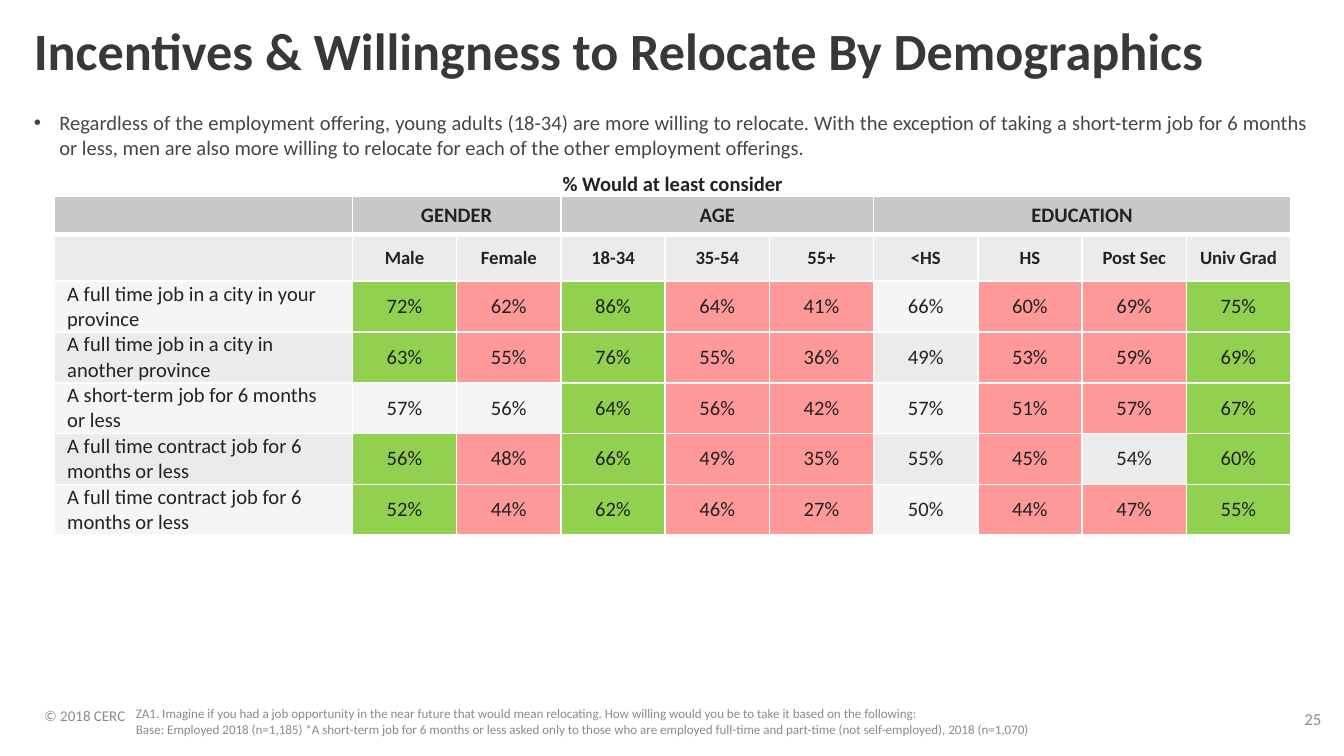
"""Build the slide on willingness to relocate by demographic group."""
from typing import NamedTuple

from lxml import etree
from pptx import Presentation
from pptx.dml.color import RGBColor
from pptx.enum.text import MSO_ANCHOR, MSO_AUTO_SIZE, PP_ALIGN
from pptx.oxml.ns import qn
from pptx.util import Cm, Pt

TOP, MID, LOW = MSO_ANCHOR.TOP, MSO_ANCHOR.MIDDLE, MSO_ANCHOR.BOTTOM
LEFT, CENTER, JUST = PP_ALIGN.LEFT, PP_ALIGN.CENTER, PP_ALIGN.JUSTIFY
FIXED = MSO_AUTO_SIZE.NONE

HUES = {
    "title": "383839", "body": "444647", "note": "888B8D", "text": "222223",
    "head": "C8C9C7", "dark": "EBEBEB", "light": "F5F5F5",
    "high": "92D050", "low": "FF9999", "line": "FFFFFF",
}
MARKS = {"+": "high", "-": "low"}


class Box(NamedTuple):
    left: float
    top: float
    width: float
    height: float


class Label(NamedTuple):
    box: Box
    text: str
    size: float
    hue: str
    bold: bool = False
    align: PP_ALIGN = LEFT
    anchor: MSO_ANCHOR = LOW
    wrap: bool = True
    space: float = 1.0


class Row(NamedTuple):
    offer: str
    rates: tuple[int, ...]
    marks: str


class Group(NamedTuple):
    name: str
    levels: tuple[str, ...]


GROUPS = (
    Group("GENDER", ("Male", "Female")),
    Group("AGE", ("18-34", "35-54", "55+")),
    Group("EDUCATION", ("<HS", "HS", "Post Sec", "Univ Grad")),
)
ROWS = (
    Row("A full time job in a city in your province",
        (72, 62, 86, 64, 41, 66, 60, 69, 75), "+-+--.--+"),
    Row("A full time job in a city in another province",
        (63, 55, 76, 55, 36, 49, 53, 59, 69), "+-+--.--+"),
    Row("A short-term job for 6 months or less",
        (57, 56, 64, 56, 42, 57, 51, 57, 67), "..+--.--+"),
    Row("A full time contract job for 6 months or less",
        (56, 48, 66, 49, 35, 55, 45, 54, 60), "+-+--.-.+"),
    Row("A full time contract job for 6 months or less",
        (52, 44, 62, 46, 27, 50, 44, 47, 55), "+-+--.--+"),
)
LABELS = (
    Label(Box(0.84, 13.23, 1.93, 0.46), "© 2018 CERC", 8, "note",
          wrap=False, space=0.85),
    Label(Box(24.46, 13.44, 0.71, 0.33), "25", 9, "note", align=CENTER,
          wrap=False, space=0.85),
    Label(Box(2.57, 13.31, 20.73, 0.61),
          "ZA1. Imagine if you had a job opportunity in the near future that "
          "would mean relocating. How willing would you be to take it based "
          "on the following:\n"
          "Base: Employed 2018 (n=1,185) *A short-term job for 6 months or "
          "less asked only to those who are employed full-time and part-time "
          "(not self-employed), 2018 (n=1,070)", 7, "note"),
    Label(Box(9.07, 3.23, 7.29, 0.48), "% Would at least consider", 11,
          "text", bold=True, align=CENTER, anchor=TOP),
)


def write(frame, text: str, *, size: float, hue: str, bold: bool = False,
          align: PP_ALIGN = LEFT, space: float = 1.0) -> None:
    for num, line in enumerate(text.split("\n")):
        para = frame.add_paragraph() if num else frame.paragraphs[0]
        para.alignment, para.line_spacing = align, space
        para.space_before = Pt(0)
        run = para.add_run()
        run.text = line
        run.font.name, run.font.size, run.font.bold = "Calibri", Pt(size), bold
        run.font.color.rgb = RGBColor.from_string(HUES[hue])


def place(shape, box: Box, anchor: MSO_ANCHOR, wrap: bool = True):
    shape.left, shape.top, shape.width, shape.height = map(Cm, box)
    frame = shape.text_frame
    frame.margin_left = frame.margin_right = 0
    frame.margin_top = frame.margin_bottom = 0
    frame.auto_size, frame.word_wrap = FIXED, wrap
    frame.vertical_anchor = anchor
    return frame


def add_label(slide, label: Label) -> None:
    shape = slide.shapes.add_textbox(*map(Cm, label.box))
    frame = place(shape, label.box, label.anchor, label.wrap)
    write(frame, label.text, size=label.size, hue=label.hue, bold=label.bold,
          align=label.align, space=label.space)


def edge(cell, thick: str = "") -> None:
    props = cell._tc.get_or_add_tcPr()
    for side in "LRTB":
        width = Pt(3 if side == thick else 1)
        line = etree.SubElement(props, qn(f"a:ln{side}"), w=str(width))
        fill = etree.SubElement(line, qn("a:solidFill"))
        etree.SubElement(fill, qn("a:srgbClr"), val=HUES["line"])


def fill_cell(cell, text: str, fill: str, *, pad: float = 0.03,
              thick: str = "", **look) -> None:
    edge(cell, thick)
    cell.fill.solid()
    cell.fill.fore_color.rgb = RGBColor.from_string(HUES[fill])
    cell.margin_left = cell.margin_right = Cm(pad)
    cell.margin_top = cell.margin_bottom = 0
    cell.vertical_anchor = MID
    write(cell.text_frame, text, hue="text", **look)


def add_grid(slide, box: Box) -> None:
    levels = [level for group in GROUPS for level in group.levels]
    grid = slide.shapes.add_table(
        len(ROWS) + 2, len(levels) + 1, *map(Cm, box)).table
    for num, col in enumerate(grid.columns):
        col.width = Cm(1.97 if num else 5.64)
    for num, row in enumerate(grid.rows):
        row.height = Cm(0.89 if num else 0.41)

    heads, start = [""], 1
    for group in GROUPS:
        span = len(group.levels)
        grid.cell(0, start).merge(grid.cell(0, start + span - 1))
        heads += [group.name] + [""] * (span - 1)
        start += span
    for col, (head, level) in enumerate(zip(heads, [""] + levels)):
        fill_cell(grid.cell(0, col), head, "head", pad=0.25, thick="B",
                  size=11, bold=True, align=CENTER)
        fill_cell(grid.cell(1, col), level, "dark", thick="T",
                  size=10, bold=True, align=CENTER)
    for num, row in enumerate(ROWS):
        band = "dark" if num % 2 else "light"
        fill_cell(grid.cell(num + 2, 0), row.offer, band, pad=0.25, size=11)
        for col, (rate, mark) in enumerate(zip(row.rates, row.marks), 1):
            fill_cell(grid.cell(num + 2, col), f"{rate}%",
                      MARKS.get(mark, band), size=11, align=CENTER)


def main() -> None:
    deck = Presentation()
    deck.slide_width, deck.slide_height = Cm(25.4), Cm(14.28)
    slide = deck.slides.add_slide(deck.slide_layouts[1])
    title, body = slide.placeholders
    write(place(title, Box(0.64, 0.48, 22.66, 1.07), MID),
          "Incentives & Willingness to Relocate By Demographics",
          size=28, hue="title", bold=True, space=0.9)
    frame = place(body, Box(0.64, 2.08, 24.1, 1.14), TOP)
    write(frame,
          "Regardless of the employment offering, young adults (18-34) are "
          "more willing to relocate. With the exception of taking a "
          "short-term job for 6 months or less, men are also more willing to "
          "relocate for each of the other employment offerings.",
          size=11, hue="body", align=JUST)
    props = frame.paragraphs[0]._p.get_or_add_pPr()
    props.set("marL", str(Cm(0.48)))
    props.set("indent", str(-Cm(0.48)))
    add_grid(slide, Box(1.02, 3.71, 23.37, 5.75))
    for label in LABELS:
        add_label(slide, label)
    deck.save("out.pptx")


if __name__ == "__main__":
    main()
